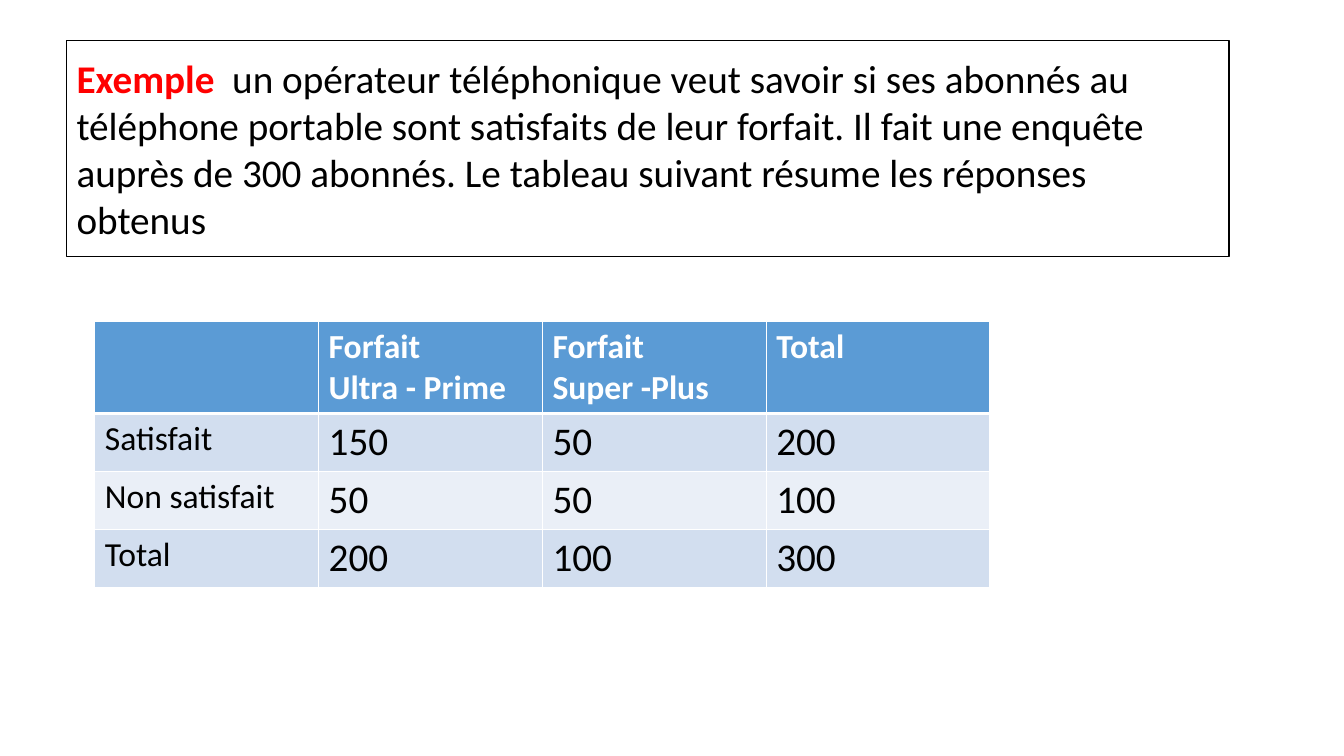
from lxml.etree import SubElement
from pptx import Presentation
from pptx.dml.color import RGBColor
from pptx.enum.shapes import MSO_SHAPE
from pptx.enum.text import MSO_ANCHOR, PP_ALIGN
from pptx.oxml.ns import qn
from pptx.util import Cm, Pt

BLACK = RGBColor(0x00, 0x00, 0x00)
WHITE = RGBColor(0xFF, 0xFF, 0xFF)
RED = RGBColor(0xFF, 0x00, 0x00)
BLUE = RGBColor(0x5B, 0x9B, 0xD5)
BAND_DARK = RGBColor(0xD2, 0xDE, 0xEF)
BAND_LIGHT = RGBColor(0xEA, 0xEF, 0xF7)

STATEMENT = [
    ("Exemple", RED, True),
    ("  un opérateur téléphonique veut savoir si ses abonnés au téléphone "
     "portable sont satisfaits de leur forfait. Il fait une enquête auprès de "
     "300 abonnés. Le tableau suivant résume les réponses obtenus", BLACK, False),
]
ROWS = [
    ("", "Forfait\nUltra - Prime", "Forfait\nSuper -Plus", "Total"),
    ("Satisfait", "150", "50", "200"),
    ("Non satisfait", "50", "50", "100"),
    ("Total", "200", "100", "300"),
]
STATEMENT_BOX = (1.68, 1.02, 29.29, 5.44)
TABLE_LEFT, TABLE_TOP, COL_WIDTH = 2.39, 8.1, 5.64
HEADER_HEIGHT, ROW_HEIGHT = 2.32, 1.46


def set_font(font, size, color, bold):
    values = {"name": "Calibri", "size": Pt(size), "bold": bold}
    for name, value in values.items():
        setattr(font, name, value)
    font.color.rgb = color


def set_borders(cell, widths):
    tcPr = cell._tc.get_or_add_tcPr()
    for side, width in widths.items():
        ln = SubElement(tcPr, qn(f"a:ln{side}"), w=str(Pt(width)))
        fill = SubElement(ln, qn("a:solidFill"))
        SubElement(fill, qn("a:srgbClr"), val=str(WHITE))


def add_statement(slide):
    sp = slide.shapes.add_shape(MSO_SHAPE.RECTANGLE, *map(Cm, STATEMENT_BOX))
    sp.shadow.inherit = False
    sp.fill.solid()
    sp.fill.fore_color.rgb = WHITE
    sp.line.color.rgb = BLACK
    sp.line.width = Pt(1)
    tf = sp.text_frame
    tf.word_wrap = True
    tf.vertical_anchor = MSO_ANCHOR.MIDDLE
    p = tf.paragraphs[0]
    p.alignment = PP_ALIGN.LEFT
    for text, color, bold in STATEMENT:
        r = p.add_run()
        r.text = text
        set_font(r.font, 28, color, bold)


def add_survey_table(slide):
    heights = [HEADER_HEIGHT] + [ROW_HEIGHT] * (len(ROWS) - 1)
    n_cols = len(ROWS[0])
    table = slide.shapes.add_table(
        len(ROWS), n_cols, Cm(TABLE_LEFT), Cm(TABLE_TOP),
        Cm(COL_WIDTH * n_cols), Cm(sum(heights))).table
    for column in table.columns:
        column.width = Cm(COL_WIDTH)
    for i, (row, height) in enumerate(zip(ROWS, heights)):
        table.rows[i].height = Cm(height)
        header = i == 0
        band = BLUE if header else BAND_DARK if i % 2 else BAND_LIGHT
        borders = {"L": 1, "R": 1, "T": 3 if i == 1 else 1, "B": 3 if header else 1}
        for j, text in enumerate(row):
            cell = table.cell(i, j)
            set_borders(cell, borders)
            cell.fill.solid()
            cell.fill.fore_color.rgb = band
            cell.text = text
            size = 24 if header or j == 0 else 28
            for p in cell.text_frame.paragraphs:
                for r in p.runs:
                    set_font(r.font, size, WHITE if header else BLACK, header)


def main():
    prs = Presentation()
    prs.slide_width, prs.slide_height = Cm(33.87), Cm(19.05)
    s = prs.slides.add_slide(prs.slide_layouts[6])
    add_statement(s)
    add_survey_table(s)
    prs.save("out.pptx")


if __name__ == "__main__":
    main()
